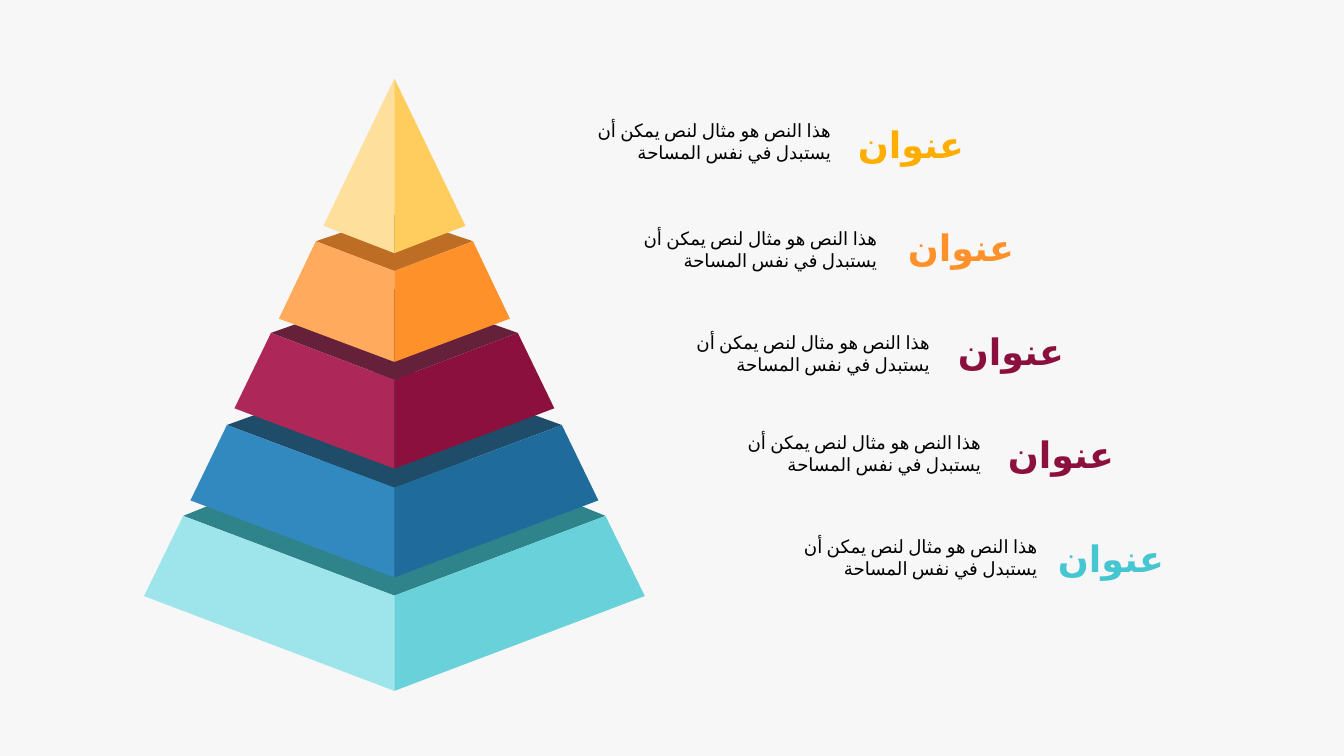
from dataclasses import dataclass
from typing import Optional

from lxml.etree import SubElement
from pptx import Presentation
from pptx.dml.color import RGBColor
from pptx.enum.lang import MSO_LANGUAGE_ID
from pptx.enum.text import PP_ALIGN
from pptx.oxml.ns import qn
from pptx.shapes.group import GroupShape
from pptx.slide import Slide
from pptx.util import Cm, Pt

FONT = "Roboto"
HEADING = "عنوان"
DESCRIPTION = "هذا النص هو مثال لنص يمكن أن يستبدل في نفس المساحة"
AXIS_X = 9.94  # centimetres, like every length below
HEADING_LEFT, HEADING_TOP = 21.62, 3.07
HEADING_STEP_X, HEADING_STEP_Y = 1.26, 2.61

Point = tuple[float, float]


@dataclass(frozen=True)
class Tier:
    """One storey of the pyramid; half widths are measured from the axis."""
    top_half: float
    back_y: float
    shoulder_y: float
    front_y: float
    base_half: float
    base_y: float
    bottom_y: float
    lid_color: Optional[str]
    left_color: str
    right_color: str
    heading_color: str
    description_at: Point


@dataclass(frozen=True)
class TextStyle:
    size: float
    bold: bool
    align: PP_ALIGN
    margin_x: float
    margin_y: float


HEADING_STYLE = TextStyle(26, True, PP_ALIGN.LEFT, 0, 0)
DESCRIPTION_STYLE = TextStyle(13, False, PP_ALIGN.RIGHT, 0.25, 0.13)

# From the tip down to the base
TIERS = [
    Tier(0, 1.98, 1.98, 1.98, 1.79, 5.69, 6.38,
         None, "FFDF9C", "FFCC5E", "FFAE00", (14.38, 2.87)),
    Tier(1.98, 5.41, 6.08, 6.83, 2.91, 8.03, 9.12,
         "BD6E24", "FFAA5C", "FF912B", "FF912B", (15.54, 5.61)),
    Tier(3.11, 7.29, 8.39, 9.57, 4.03, 10.29, 11.81,
         "66213A", "AD2858", "8C103D", "8C103D", (16.87, 8.23)),
    Tier(4.22, 9.19, 10.71, 12.29, 5.14, 12.61, 14.55,
         "1E4C69", "3289BF", "1F6C9C", "8C103D", (18.16, 10.74)),
    Tier(5.32, 10.85, 13.0, 15.01, 6.31, 15.02, 17.41,
         "2F838A", "9DE4EB", "69D1DA", "45C6D1", (19.58, 13.36)),
]


def rgb(color: str) -> RGBColor:
    return RGBColor.from_string(color)


def add_face(group: GroupShape, corners: list[Point], color: str) -> None:
    """Draw a filled polygon whose x values are offsets from the axis."""
    distinct = dict.fromkeys(corners)
    start, *rest = [(Cm(AXIS_X + x), Cm(y)) for x, y in distinct]
    builder = group.shapes.build_freeform(*start)
    builder.add_line_segments(rest, close=True)
    face = builder.convert_to_shape()
    face.fill.solid()
    face.fill.fore_color.rgb = rgb(color)
    face.line.fill.background()
    face.shadow.inherit = False


def add_tier(slide: Slide, tier: Tier) -> None:
    group = slide.shapes.add_group_shape()
    if tier.lid_color:
        lid = [(-tier.top_half, tier.shoulder_y), (0, tier.back_y),
               (tier.top_half, tier.shoulder_y), (0, tier.front_y)]
        add_face(group, lid, tier.lid_color)
    for side, color in ((-1, tier.left_color), (1, tier.right_color)):
        wall = [(0, tier.front_y), (side * tier.top_half, tier.shoulder_y),
                (side * tier.base_half, tier.base_y), (0, tier.bottom_y)]
        add_face(group, wall, color)


def add_label(slide: Slide, text: str, at: Point, size: Point,
              color: str, style: TextStyle) -> None:
    box = slide.shapes.add_textbox(*map(Cm, at + size))
    frame_format = {
        "word_wrap": True,
        "margin_left": Cm(style.margin_x), "margin_right": Cm(style.margin_x),
        "margin_top": Cm(style.margin_y), "margin_bottom": Cm(style.margin_y),
    }
    for attribute, value in frame_format.items():
        setattr(box.text_frame, attribute, value)
    paragraph = box.text_frame.paragraphs[0]
    paragraph.alignment = style.align
    run = paragraph.add_run()
    run.text = text
    font_format = {"name": FONT, "size": Pt(style.size), "bold": style.bold,
                   "language_id": MSO_LANGUAGE_ID.ARABIC}
    for attribute, value in font_format.items():
        setattr(run.font, attribute, value)
    run.font.color.rgb = rgb(color)
    # Arabic letters take the complex-script typeface
    SubElement(run.font._element, qn("a:cs"), typeface=FONT)


def main() -> None:
    presentation = Presentation()
    presentation.slide_width, presentation.slide_height = Cm(33.87), Cm(19.05)
    slide = presentation.slides.add_slide(presentation.slide_layouts[6])
    slide.background.fill.solid()
    slide.background.fill.fore_color.rgb = rgb("F7F7F7")

    for tier in reversed(TIERS):
        add_tier(slide, tier)
    for row, tier in enumerate(TIERS):
        heading_at = (HEADING_LEFT + row * HEADING_STEP_X,
                      HEADING_TOP + row * HEADING_STEP_Y)
        add_label(slide, HEADING, heading_at, (4.6, 1.12),
                  tier.heading_color, HEADING_STYLE)
        add_label(slide, DESCRIPTION, tier.description_at, (6.81, 1.37),
                  "000000", DESCRIPTION_STYLE)
    presentation.save("out.pptx")


if __name__ == "__main__":
    main()
